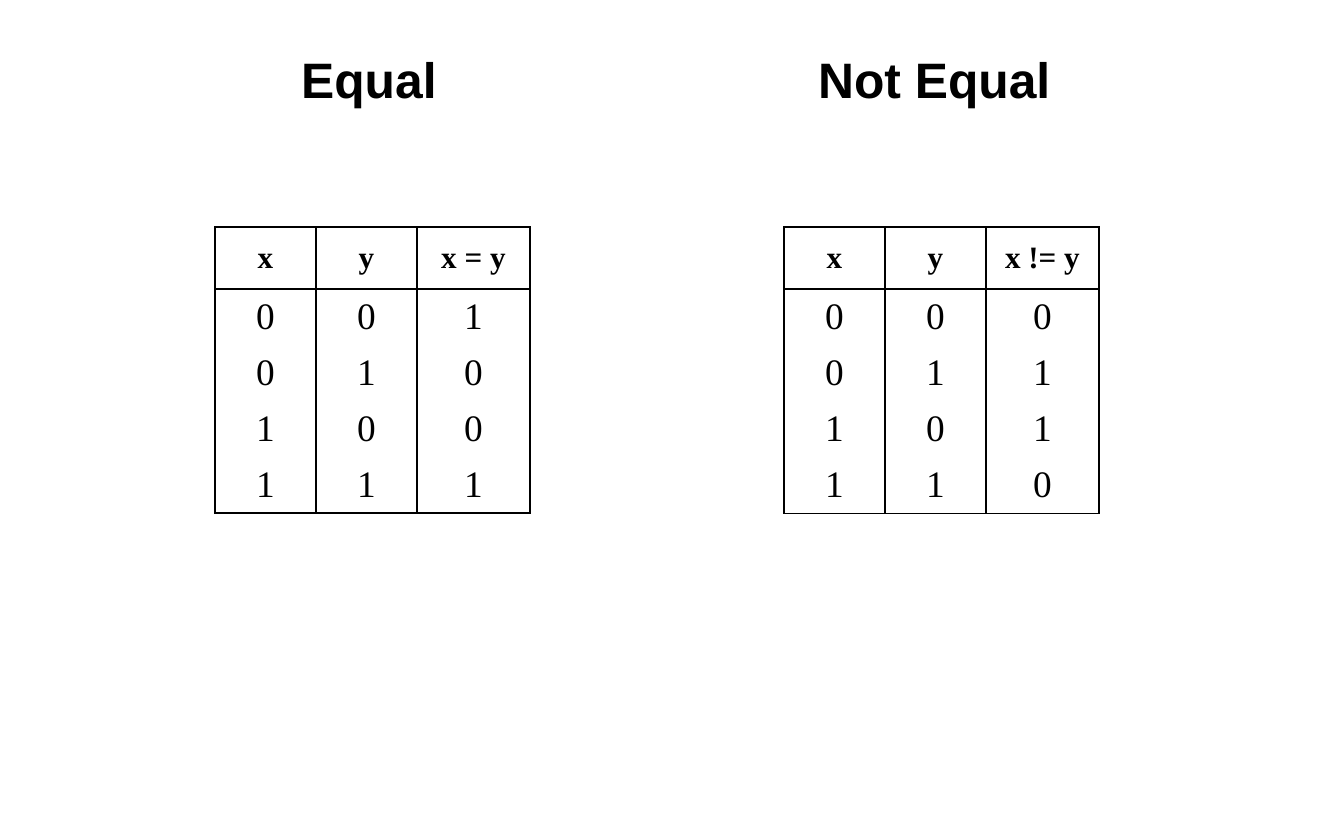
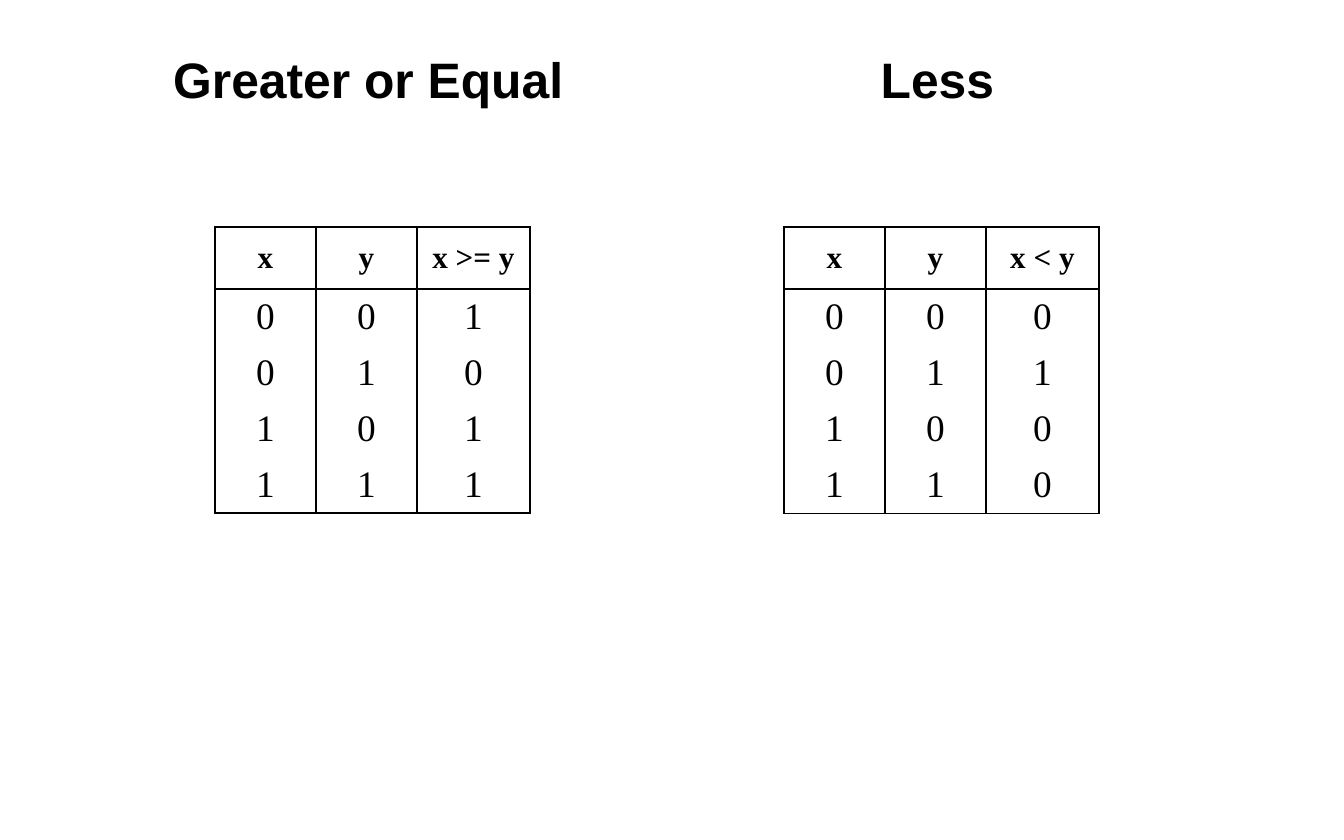
"""Build two slides of truth tables for comparison operators."""
import itertools

import lxml.etree
import pptx
import pptx.dml.color
import pptx.enum.text
import pptx.oxml.ns
import pptx.util

PX = 914400 / 112
COLORS = {"ink": "000000"}
HEADING_FONT = "Arial"
TABLE_FONT = "Times New Roman"
HEADING_TOP, HEADING_HEIGHT = 37, 84
TABLE_TOP = 227
TABLE_LEFTS = [215, 784]
COLUMN_WIDTHS = [101, 101, 113]
ROW_HEIGHTS = [62, 56, 56, 56, 56]

# Each comparison: heading, heading left, heading width, expression, results
SLIDES = [
    [("Equal", 112, 514, "x = y", "1001"),
     ("Not Equal", 579, 711, "x != y", "0110")],
    [("Greater or Equal", 112, 513, "x >= y", "1011"),
     ("Less", 709, 457, "x < y", "0100")],
]


def px(*lengths):
    return [pptx.util.Emu(round(length * PX)) for length in lengths]


def write(text_frame, text, font_name, size, bold):
    text_frame.text = text
    paragraph = text_frame.paragraphs[0]
    paragraph.alignment = pptx.enum.text.PP_ALIGN.CENTER
    font = paragraph.runs[0].font
    font.name, font.size, font.bold = font_name, pptx.util.Pt(size), bold
    font.color.rgb = pptx.dml.color.RGBColor.from_string(COLORS["ink"])
    return paragraph


presentation = pptx.Presentation()
presentation.slide_width, presentation.slide_height = px(1344, 840)
title_only = presentation.slide_layouts[5]

for comparisons in SLIDES:
    slide = presentation.slides.add_slide(title_only)
    for position, comparison in enumerate(comparisons):
        heading, heading_left, heading_width, expression, results = comparison
        box = px(heading_left, HEADING_TOP, heading_width, HEADING_HEIGHT)
        if position == 0:
            shape = slide.shapes.title
            shape.left, shape.top, shape.width, shape.height = box
        else:
            shape = slide.shapes.add_textbox(*box)
        shape.text_frame.word_wrap = True
        shape.text_frame.vertical_anchor = pptx.enum.text.MSO_ANCHOR.MIDDLE
        write(shape.text_frame, heading, HEADING_FONT, 32, True)

        inputs = itertools.product("01", repeat=2)
        rows = [("x", "y", expression)]
        rows += [(x, y, result) for (x, y), result in zip(inputs, results)]
        frame = slide.shapes.add_table(
            len(rows), len(COLUMN_WIDTHS),
            *px(TABLE_LEFTS[position], TABLE_TOP, sum(COLUMN_WIDTHS), sum(ROW_HEIGHTS)))
        table = frame.table
        table.first_row = table.horz_banding = False
        for column, width in zip(table.columns, px(*COLUMN_WIDTHS)):
            column.width = width
        for row, height in zip(table.rows, px(*ROW_HEIGHTS)):
            row.height = height

        for row_index, values in enumerate(rows):
            is_header = row_index == 0
            edges = {"lnL": True, "lnR": True, "lnT": row_index <= 1,
                     "lnB": is_header or row_index == len(rows) - 1}
            for column_index, value in enumerate(values):
                cell = table.cell(row_index, column_index)
                cell.vertical_anchor = pptx.enum.text.MSO_ANCHOR.MIDDLE
                paragraph = write(cell.text_frame, value, TABLE_FONT,
                                  20 if is_header else 24, is_header)
                paragraph.space_before = pptx.util.Pt(6 if is_header else 12)
                properties = cell._tc.get_or_add_tcPr()
                for edge, visible in edges.items():
                    line = lxml.etree.SubElement(
                        properties, pptx.oxml.ns.qn("a:" + edge), w=str(pptx.util.Pt(1)))
                    fill = lxml.etree.SubElement(
                        line, pptx.oxml.ns.qn("a:solidFill" if visible else "a:noFill"))
                    if visible:
                        lxml.etree.SubElement(
                            fill, pptx.oxml.ns.qn("a:srgbClr"), val=COLORS["ink"])
                cell.fill.background()

presentation.save("out.pptx")
